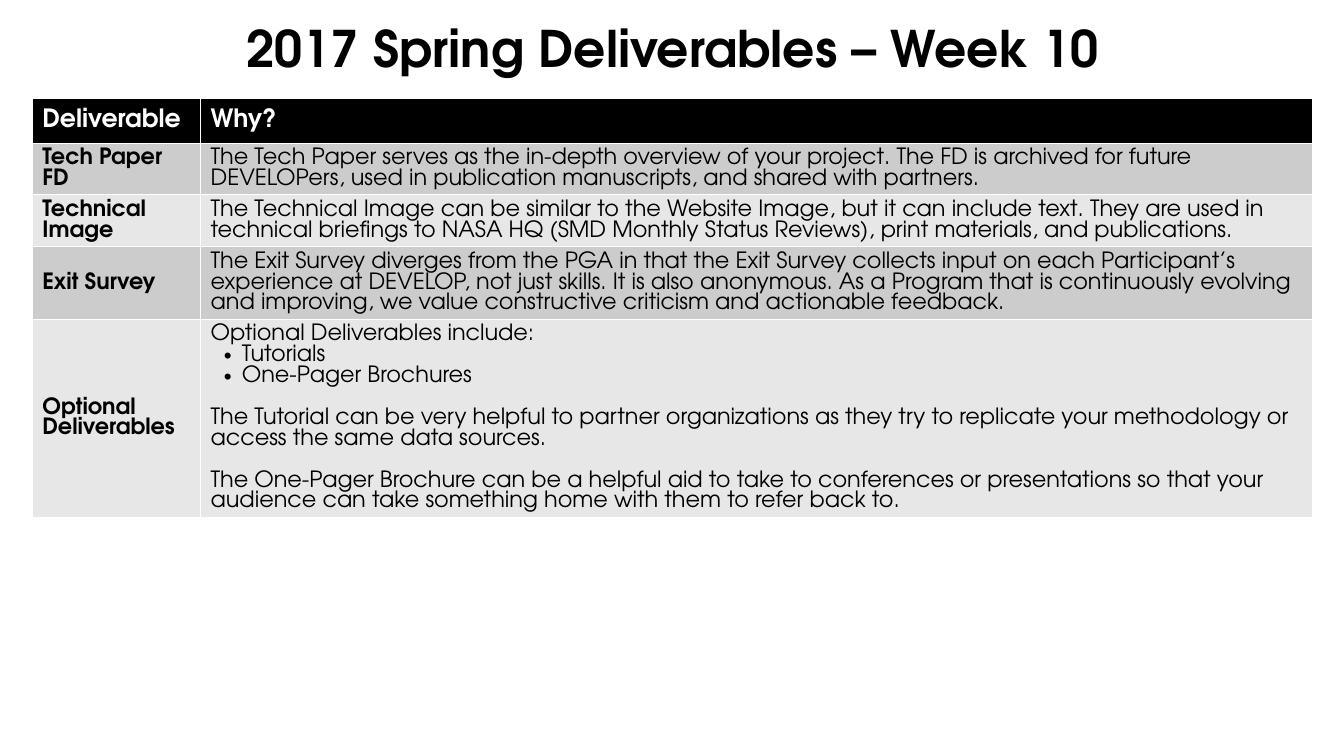
import pptx
import pptx.dml.color
import pptx.enum.text
import pptx.oxml.ns
import pptx.util
from lxml import etree

Inches = pptx.util.Inches
Pt = pptx.util.Pt
MIDDLE = pptx.enum.text.MSO_ANCHOR.MIDDLE

COLORS = {"black": "000000", "white": "FFFFFF", "dark band": "CCCCCC", "light band": "E7E7E7"}

HEADINGS = ["Deliverable", "Why?"]
BULLET = "• "
DELIVERABLES = [
    ("Tech Paper FD", [
        "The Tech Paper serves as the in-depth overview of your project. The FD is archived for future "
        "DEVELOPers, used in publication manuscripts, and shared with partners."]),
    ("Technical Image", [
        "The Technical Image can be similar to the Website Image, but it can include text. They are used in "
        "technical briefings to NASA HQ (SMD Monthly Status Reviews), print materials, and publications."]),
    ("Exit Survey", [
        "The Exit Survey diverges from the PGA in that the Exit Survey collects input on each Participant’s "
        "experience at DEVELOP, not just skills. It is also anonymous. As a Program that is continuously "
        "evolving and improving, we value constructive criticism and actionable feedback."]),
    ("Optional Deliverables", [
        "Optional Deliverables include:",
        BULLET + "Tutorials",
        BULLET + "One-Pager Brochures",
        "The Tutorial can be very helpful to partner organizations as they try to replicate your methodology "
        "or access the same data sources.",
        "The One-Pager Brochure can be a helpful aid to take to conferences or presentations so that your "
        "audience can take something home with them to refer back to."]),
]


class DeliverablesSlide:
    """Holds the text style and the slide, and adds each kind of element."""

    font_name = "TeX Gyre Adventor"

    def __init__(self, presentation):
        self.slide = presentation.slides.add_slide(presentation.slide_layouts[5])

    def color(self, name):
        return pptx.dml.color.RGBColor.from_string(COLORS[name])

    def style(self, paragraph, size, color="black", bold=False):
        font = paragraph.font
        font.name = self.font_name
        font.size = Pt(size)
        font.bold = bold
        font.color.rgb = self.color(color)

    def title(self, text):
        shape = self.slide.shapes.title
        shape.left, shape.top = Inches(0.92), Inches(0.18)
        shape.width, shape.height = Inches(11.5), Inches(0.65)
        frame = shape.text_frame
        frame.text = text
        frame.auto_size = pptx.enum.text.MSO_AUTO_SIZE.NONE
        frame.vertical_anchor = MIDDLE
        paragraph = frame.paragraphs[0]
        paragraph.alignment = pptx.enum.text.PP_ALIGN.CENTER
        paragraph.line_spacing = 0.9
        self.style(paragraph, 36, bold=True)

    def bullet(self, paragraph):
        properties = paragraph._p.get_or_add_pPr()
        properties.set("marL", str(Inches(0.31)))
        properties.set("indent", str(Inches(-0.18)))
        etree.SubElement(properties, pptx.oxml.ns.qn("a:buFont"), typeface="Arial")
        etree.SubElement(properties, pptx.oxml.ns.qn("a:buChar"), char=BULLET.strip())

    def cell(self, cell, lines, fill, size=16, color="black", bold=False):
        cell.fill.solid()
        cell.fill.fore_color.rgb = self.color(fill)
        cell.vertical_anchor = MIDDLE
        for index, line in enumerate(lines):
            frame = cell.text_frame
            paragraph = frame.add_paragraph() if index else frame.paragraphs[0]
            paragraph.text = line.removeprefix(BULLET)
            if line.startswith(BULLET):
                self.bullet(paragraph)
            elif index:
                paragraph.space_before = Pt(15)
            self.style(paragraph, size, color, bold)

    def table(self, headings, records):
        heights = [0.44] + [0.47] * len(records)
        frame = self.slide.shapes.add_table(
            len(heights), len(headings), Inches(0.32), Inches(0.98), Inches(12.7), Inches(sum(heights)))
        table = frame.table
        for column, width in zip(table.columns, (1.67, 11.03)):
            column.width = Inches(width)
        for row, height in zip(table.rows, heights):
            row.height = Inches(height)
        for column, heading in enumerate(headings):
            self.cell(table.cell(0, column), [heading], "black", 18, "white", True)
        for row, (name, reasons) in enumerate(records, 1):
            fill = "dark band" if row % 2 else "light band"
            self.cell(table.cell(row, 0), [name], fill, bold=True)
            self.cell(table.cell(row, 1), reasons, fill)


def main():
    presentation = pptx.Presentation()
    presentation.slide_width = Inches(13.33)
    presentation.slide_height = Inches(7.5)
    page = DeliverablesSlide(presentation)
    page.title("2017 Spring Deliverables – Week 10")
    page.table(HEADINGS, DELIVERABLES)
    presentation.save("out.pptx")


if __name__ == "__main__":
    main()
